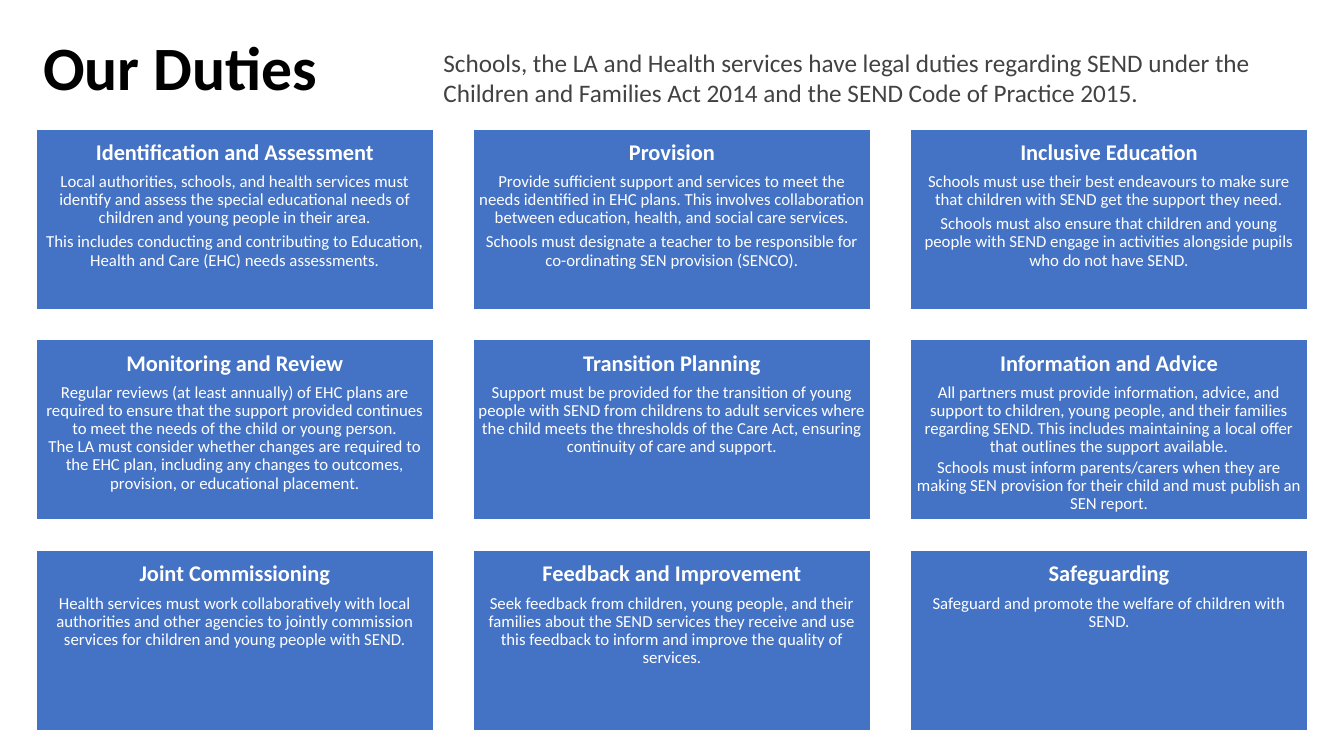
from copy import deepcopy

from pptx import Presentation
from pptx.dml.color import RGBColor
from pptx.enum import shapes, text
from pptx.oxml.ns import qn
from pptx.util import Inches, Pt

TITLE = "Our Duties"
INTRO = [
    "Schools, the LA and Health services have legal duties regarding SEND under the",
    "Children and Families Act 2014 and the SEND Code of Practice 2015.",
]
DUTIES = [
    ("Identification and Assessment", [
        "Local authorities, schools, and health services must identify and assess the special educational needs of children and young people in their area.",
        "This includes conducting and contributing to Education, Health and Care (EHC) needs assessments.",
    ]),
    ("Provision", [
        "Provide sufficient support and services to meet the needs identified in EHC plans. This involves collaboration between education, health, and social care services.",
        "Schools must designate a teacher to be responsible for co-ordinating SEN provision (SENCO).",
    ]),
    ("Inclusive Education", [
        "Schools must use their best endeavours to make sure that children with SEND get the support they need.",
        "Schools must also ensure that children and young people with SEND engage in activities alongside pupils who do not have SEND.",
    ]),
    ("Monitoring and Review", [
        "Regular reviews (at least annually) of EHC plans are required to ensure that the support provided continues to meet the needs of the child or young person.\nThe LA must consider whether changes are required to the EHC plan, including any changes to outcomes, provision, or educational placement.",
    ]),
    ("Transition Planning", [
        "Support must be provided for the transition of young people with SEND from childrens to adult services where the child meets the thresholds of the Care Act, ensuring continuity of care and support.",
    ]),
    ("Information and Advice", [
        "All partners must provide information, advice, and support to children, young people, and their families regarding SEND. This includes maintaining a local offer that outlines the support available.",
        "Schools must inform parents/carers when they are making SEN provision for their child and must publish an SEN report.",
    ]),
    ("Joint Commissioning", [
        "Health services must work collaboratively with local authorities and other agencies to jointly commission services for children and young people with SEND.",
    ]),
    ("Feedback and Improvement", [
        "Seek feedback from children, young people, and their families about the SEND services they receive and use this feedback to inform and improve the quality of services.",
    ]),
    ("Safeguarding", [
        "Safeguard and promote the welfare of children with SEND.",
    ]),
]
TIGHT = {"Information and Advice"}
COLORS = {"title": "000000", "intro": "424242", "card": "4472C4", "white": "FFFFFF"}
FONT = "Calibri"
COLS = 3
LEFT, TOP = 0.36, 1.28
WIDE, HIGH = 3.94, 1.79
STEP_X, STEP_Y = 4.335, 2.09


def paint(name):
    return RGBColor.from_string(COLORS[name])


def write(frame, line, size, color, bold=False, align=text.PP_ALIGN.LEFT,
          after=0, leading=1.0, first=False):
    para = frame.paragraphs[0] if first else frame.add_paragraph()
    para.text = line
    para.alignment = align
    para.space_before, para.space_after = Pt(0), Pt(after)
    para.line_spacing = leading
    for run in para.runs:
        font = run.font
        font.name, font.size, font.bold = FONT, Pt(size), bold
        font.color.rgb = paint(color)
    for gap in para._p.findall(qn("a:br")):
        gap.append(deepcopy(para.runs[0]._r.rPr))


def add_box(slide, lines, place, **style):
    frame = slide.shapes.add_textbox(*map(Inches, place)).text_frame
    frame.word_wrap = True
    frame.vertical_anchor = text.MSO_ANCHOR.MIDDLE
    for i, line in enumerate(lines):
        write(frame, line, first=i == 0, **style)


def add_card(slide, index, head, body):
    row, col = divmod(index, COLS)
    place = (LEFT + col * STEP_X, TOP + row * STEP_Y, WIDE, HIGH)
    card = slide.shapes.add_shape(shapes.MSO_SHAPE.RECTANGLE, *map(Inches, place))
    card.shadow.inherit = False
    card.fill.solid()
    card.fill.fore_color.rgb = paint("card")
    card.line.color.rgb = paint("white")
    card.line.width = Pt(1)
    frame = card.text_frame
    frame.word_wrap = True
    frame.vertical_anchor = text.MSO_ANCHOR.TOP
    frame.margin_left = frame.margin_right = frame.margin_bottom = Inches(0.05)
    frame.margin_top = Inches(0.12)
    style = dict(color="white", align=text.PP_ALIGN.CENTER, leading=0.9)
    write(frame, head, 16, bold=True, after=5.6, first=True, **style)
    for line in body:
        write(frame, line, 12, after=1.8 if head in TIGHT else 4.2, **style)


def main():
    """Build the slide of duties and save it."""
    deck = Presentation()
    deck.slide_width, deck.slide_height = Inches(13.33), Inches(7.5)
    slide = deck.slides.add_slide(deck.slide_layouts[6])
    add_box(slide, [TITLE], (0.33, 0, 11.5, 1.31), size=44, color="title", bold=True)
    add_box(slide, INTRO, (4.3, 0.41, 9, 0.71), size=18, color="intro")
    for index, (head, body) in enumerate(DUTIES):
        add_card(slide, index, head, body)
    deck.save("out.pptx")


if __name__ == "__main__":
    main()
